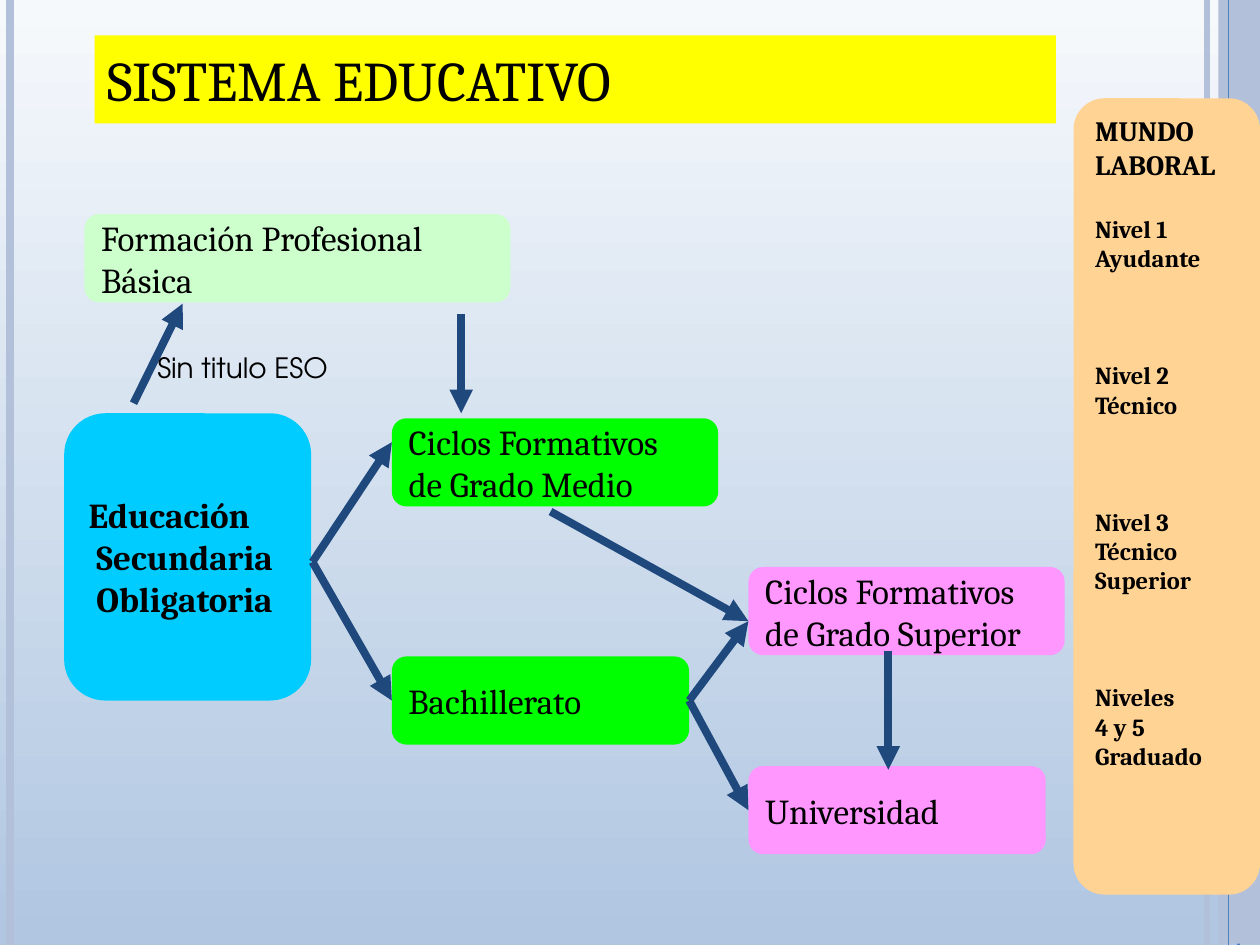
from dataclasses import dataclass

from lxml import etree
from pptx import Presentation
from pptx.dml.color import RGBColor
from pptx.enum import shapes, text
from pptx.oxml import ns
from pptx.util import Inches, Pt

COLORS = {
    "sky": "F6F9FC", "haze": "B0C6E1", "bar": "B2C0DA", "rule": "4F81BD",
    "arrow": "1F497D", "black": "000000", "yellow": "FFFF00",
    "mint": "CCFFCC", "cyan": "00CCFF", "green": "00FF00",
    "pink": "FF97FF", "peach": "FFD393",
}
FONT = "Cambria"
LABEL_FONT = "TeX Gyre Adventor"
BOX_H = 0.7


@dataclass
class Line:
    text: str
    size: float = 20
    bold: bool = False
    before: float = 0
    font: str = FONT


@dataclass
class Box:
    left: float
    top: float
    width: float
    height: float
    color: str
    lines: list[Line]
    anchor: text.MSO_ANCHOR = text.MSO_ANCHOR.MIDDLE


@dataclass
class Stroke:
    x1: float
    y1: float
    x2: float
    y2: float
    color: str = "arrow"
    width: float = 4.5
    arrow: bool = True


def rgb(name: str) -> RGBColor:
    return RGBColor.from_string(COLORS[name])


def write(sp, lines: list[Line], anchor) -> None:
    tf = sp.text_frame
    tf.word_wrap = True
    tf.auto_size = text.MSO_AUTO_SIZE.NONE
    tf.vertical_anchor = anchor
    for i, line in enumerate(lines):
        p = tf.add_paragraph() if i else tf.paragraphs[0]
        p.alignment = text.PP_ALIGN.LEFT
        p.space_before = Pt(line.before)
        r = p.add_run()
        r.text = line.text
        r.font.name = line.font
        r.font.size = Pt(line.size)
        r.font.bold = line.bold
        r.font.color.rgb = rgb("black")


def paint(sp, color: str) -> None:
    sp.fill.solid()
    sp.fill.fore_color.rgb = rgb(color)
    sp.line.fill.background()


def draw_box(slide, box: Box) -> None:
    sp = slide.shapes.add_shape(
        shapes.MSO_SHAPE.ROUNDED_RECTANGLE, Inches(box.left), Inches(box.top),
        Inches(box.width), Inches(box.height))
    sp.shadow.inherit = False
    paint(sp, box.color)
    write(sp, box.lines, box.anchor)


def draw_stroke(slide, s: Stroke) -> None:
    c = slide.shapes.add_connector(
        shapes.MSO_CONNECTOR.STRAIGHT, Inches(s.x1), Inches(s.y1),
        Inches(s.x2), Inches(s.y2))
    c.line.color.rgb = rgb(s.color)
    c.line.width = Pt(s.width)
    if s.arrow:
        etree.SubElement(c.line._get_or_add_ln(), ns.qn("a:tailEnd"),
                         type="triangle")
    etree.SubElement(c._element.spPr, ns.qn("a:effectLst"))


def draw_title(slide) -> None:
    title = slide.shapes.title
    title.left, title.top = Inches(0.75), Inches(0.28)
    title.width, title.height = Inches(7.63), Inches(BOX_H)
    geom = etree.Element(ns.qn("a:prstGeom"), prst="roundRect")
    etree.SubElement(geom, ns.qn("a:avLst"))
    title._element.spPr.find(ns.qn("a:xfrm")).addnext(geom)
    paint(title, "yellow")
    write(title, [Line("SISTEMA EDUCATIVO", 32)], text.MSO_ANCHOR.MIDDLE)


def draw_backdrop(slide) -> None:
    fill = slide.background.fill
    fill.gradient()
    fill.gradient_angle = 270
    for stop, name in zip(fill.gradient_stops, ("sky", "haze")):
        stop.color.rgb = rgb(name)

    def rule(x: float, color: str, width: float) -> None:
        draw_stroke(slide, Stroke(x, 0, x, 7.5, color, width, arrow=False))

    rule(9.58, "bar", 3)
    rule(0.08, "bar", 4.5)
    rule(9.83, "rule", 1.5)
    sp = slide.shapes.add_shape(shapes.MSO_SHAPE.RECTANGLE, Inches(9.67), 0,
                                Inches(0.33), Inches(7.49))
    sp.shadow.inherit = False
    paint(sp, "bar")
    rule(9.75, "rule", 0.75)


def level_lines() -> list[Line]:
    levels = [("Nivel 1", "Ayudante"), ("Nivel 2", "Técnico"),
              ("Nivel 3", "Técnico", "Superior"),
              ("Niveles", "4 y 5", "Graduado")]
    lines = [Line("MUNDO", 16, True), Line("LABORAL", 16, True)]
    for i, (head, *rest) in enumerate(levels):
        lines.append(Line(head, 14, True, before=50 if i else 19))
        lines += [Line(t, 14, True) for t in rest]
    return lines


def main() -> None:
    prs = Presentation()
    prs.slide_width, prs.slide_height = Inches(10), Inches(7.5)
    slide = prs.slides.add_slide(prs.slide_layouts[5])
    draw_backdrop(slide)
    draw_title(slide)

    # Stages of the school system and the labour panel
    boxes = [
        Box(3.11, 5.21, 2.36, BOX_H, "green", [Line("Bachillerato")]),
        Box(5.94, 6.08, 2.36, BOX_H, "pink", [Line("Universidad")]),
        Box(3.11, 3.32, 2.59, BOX_H, "green",
            [Line("Ciclos Formativos"), Line("de Grado Medio")]),
        Box(5.94, 4.5, 2.51, BOX_H, "pink",
            [Line("Ciclos Formativos"), Line("de Grado Superior")]),
        Box(0.51, 3.28, 1.96, 2.28, "cyan",
            [Line(t, bold=True)
             for t in ("Educación", " Secundaria", " Obligatoria")]),
        Box(0.67, 1.7, 3.38, BOX_H, "mint",
            [Line("Formación Profesional"), Line("Básica")]),
        Box(8.52, 0.78, 1.48, 6.32, "peach", level_lines(),
            text.MSO_ANCHOR.TOP),
    ]
    for box in boxes:
        draw_box(slide, box)

    # Paths between stages
    arrows = [
        Stroke(2.48, 4.46, 3.11, 3.51), Stroke(2.48, 4.46, 3.11, 5.56),
        Stroke(5.47, 5.56, 5.94, 4.93), Stroke(5.47, 5.56, 5.94, 6.43),
        Stroke(1.06, 3.2, 1.45, 2.41), Stroke(4.37, 4.06, 5.94, 4.93),
        Stroke(3.66, 2.49, 3.66, 3.28), Stroke(7.05, 5.17, 7.05, 6.11),
    ]
    for arrow in arrows:
        draw_stroke(slide, arrow)

    # Label on the path to basic training
    label = slide.shapes.add_textbox(Inches(1.15), Inches(2.73), Inches(1.7),
                                     Inches(0.36))
    write(label, [Line("Sin titulo ESO", 16, font=LABEL_FONT)],
          text.MSO_ANCHOR.TOP)
    prs.save("out.pptx")


if __name__ == "__main__":
    main()
